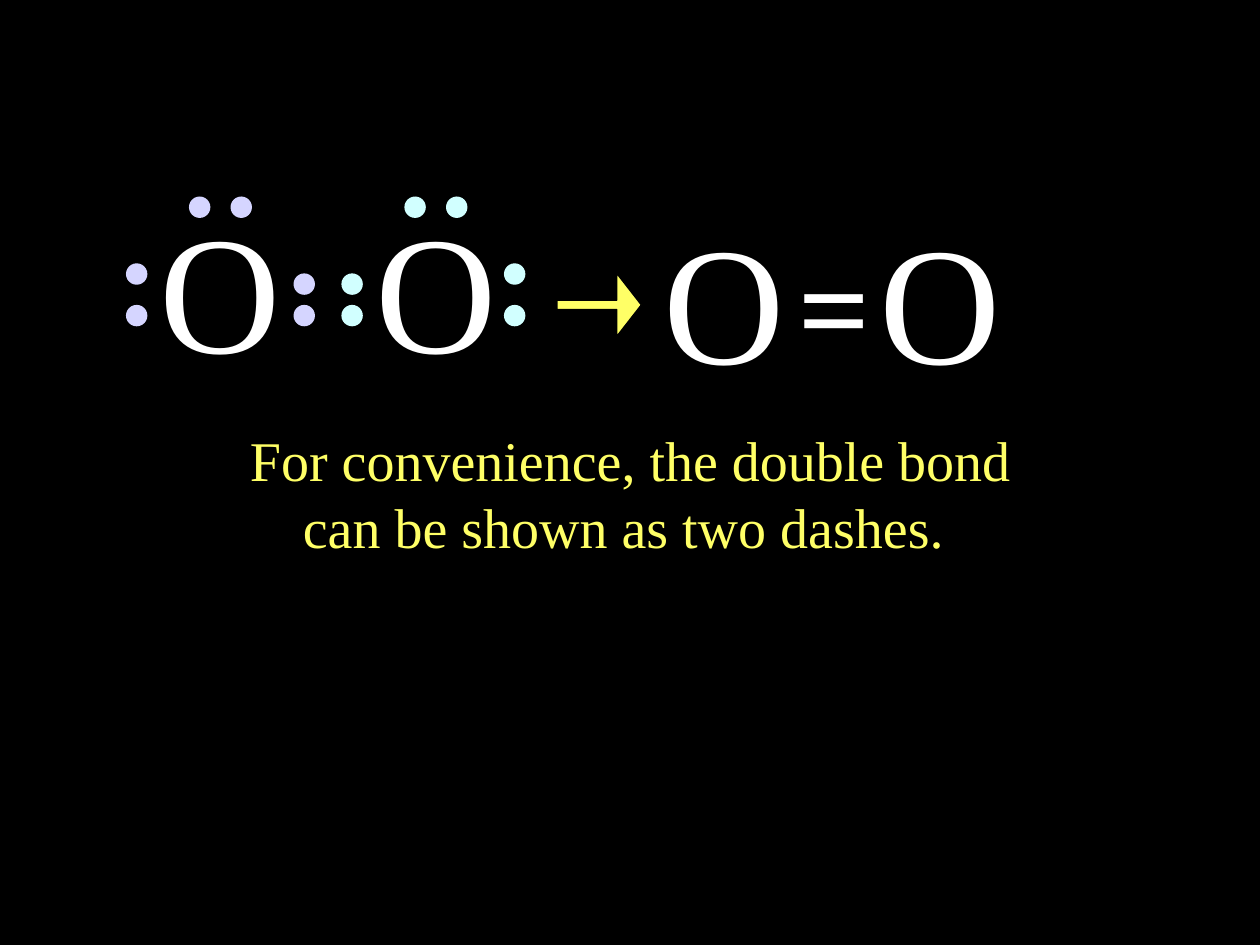
from pptx import Presentation
from pptx import util as u
from pptx.dml import color
from pptx.enum import shapes, text

FONT = "Times New Roman"
BLACK, WHITE, YELLOW = "000000", "FFFFFF", "FFFF66"
LILAC, CYAN = "D5D5FF", "D1FFFF"
ATOM_WIDTH, ATOM_HEIGHT = 1.16, 1.7
ATOM_STEP = 1.71
DOT = 0.17
LONE_GAP, BOND_GAP = 0.33, 0.25


def rgb(value):
    return color.RGBColor.from_string(value)


def inches(*lengths):
    return [u.Inches(length) for length in lengths]


def add_label(parent, box, lines, size, colour, bold=False, align=text.PP_ALIGN.LEFT):
    label = parent.add_textbox(*inches(*box))
    frame = label.text_frame
    frame.text = "\n".join(lines)
    frame.word_wrap = False
    frame.auto_size = text.MSO_AUTO_SIZE.SHAPE_TO_FIT_TEXT
    for paragraph in frame.paragraphs:
        paragraph.alignment = align
        for run in paragraph.runs:
            run.font.name = FONT
            run.font.size = u.Pt(size)
            run.font.bold = bold
            run.font.color.rgb = rgb(colour)


def add_oxygen(parent, left, top):
    add_label(parent, (left, top, ATOM_WIDTH, ATOM_HEIGHT), ["O"], 96, WHITE)


def add_filled(parent, kind, box, colour):
    shape = parent.add_shape(kind, *inches(*box))
    shape.shadow.inherit = False
    shape.fill.solid()
    shape.fill.fore_color.rgb = rgb(colour)
    shape.line.fill.background()
    return shape


def add_lewis_atom(parent, left, top, colour, bond_on_right):
    """Oxygen with a lone pair above, one outside and a closer bonding pair inside."""
    add_oxygen(parent, left, top)
    lowest = top + 1
    left_gap, right_gap = (LONE_GAP, BOND_GAP) if bond_on_right else (BOND_GAP, LONE_GAP)
    pair_left, pair_top = left + 0.33, top + 0.14
    left_x = left - DOT
    right_x = left + (ATOM_WIDTH if bond_on_right else 1.12)
    electrons = [
        (left_x, lowest - left_gap), (left_x, lowest),
        (pair_left, pair_top), (pair_left + LONE_GAP, pair_top),
        (right_x, lowest - right_gap), (right_x, lowest),
    ]
    for x, y in electrons:
        add_filled(parent, shapes.MSO_SHAPE.OVAL, (x, y, DOT, DOT), colour)


def add_dot_structure(slide, left, top):
    group = slide.shapes.add_group_shape().shapes
    add_lewis_atom(group, left + ATOM_STEP, top, CYAN, bond_on_right=False)
    add_lewis_atom(group, left, top, LILAC, bond_on_right=True)


def add_dash_structure(slide, left, top):
    group = slide.shapes.add_group_shape().shapes
    for column in range(2):
        add_oxygen(group, left + column * ATOM_STEP, top)
    add_label(group, (left + 1.07, top + 0.25, 0.77, 1.3), ["="], 72, WHITE, bold=True)


def add_arrow(slide, box):
    arrow = add_filled(slide.shapes, shapes.MSO_SHAPE.RIGHT_ARROW, box, YELLOW)
    arrow.adjustments[0], arrow.adjustments[1] = 0.146, 0.389
    arrow.line.color.rgb = rgb(BLACK)
    arrow.line.width = u.Pt(0.75)


def add_caption(slide, box):
    lines = ["For convenience, the double bond ", "can be shown as two dashes. "]
    add_label(slide.shapes, box, lines, 32, YELLOW, align=text.PP_ALIGN.CENTER)


def main():
    presentation = Presentation()
    presentation.slide_width, presentation.slide_height = inches(10, 7.5)
    slide = presentation.slides.add_slide(presentation.slide_layouts[6])
    slide.background.fill.solid()
    slide.background.fill.fore_color.rgb = rgb(BLACK)

    add_dash_structure(slide, 5.17, 1.51)
    add_caption(slide, (1.83, 3.33, 6.35, 1.17))
    add_arrow(slide, (4.42, 2.17, 0.67, 0.5))
    add_dot_structure(slide, 1.17, 1.42)
    presentation.save("out.pptx")


if __name__ == "__main__":
    main()
